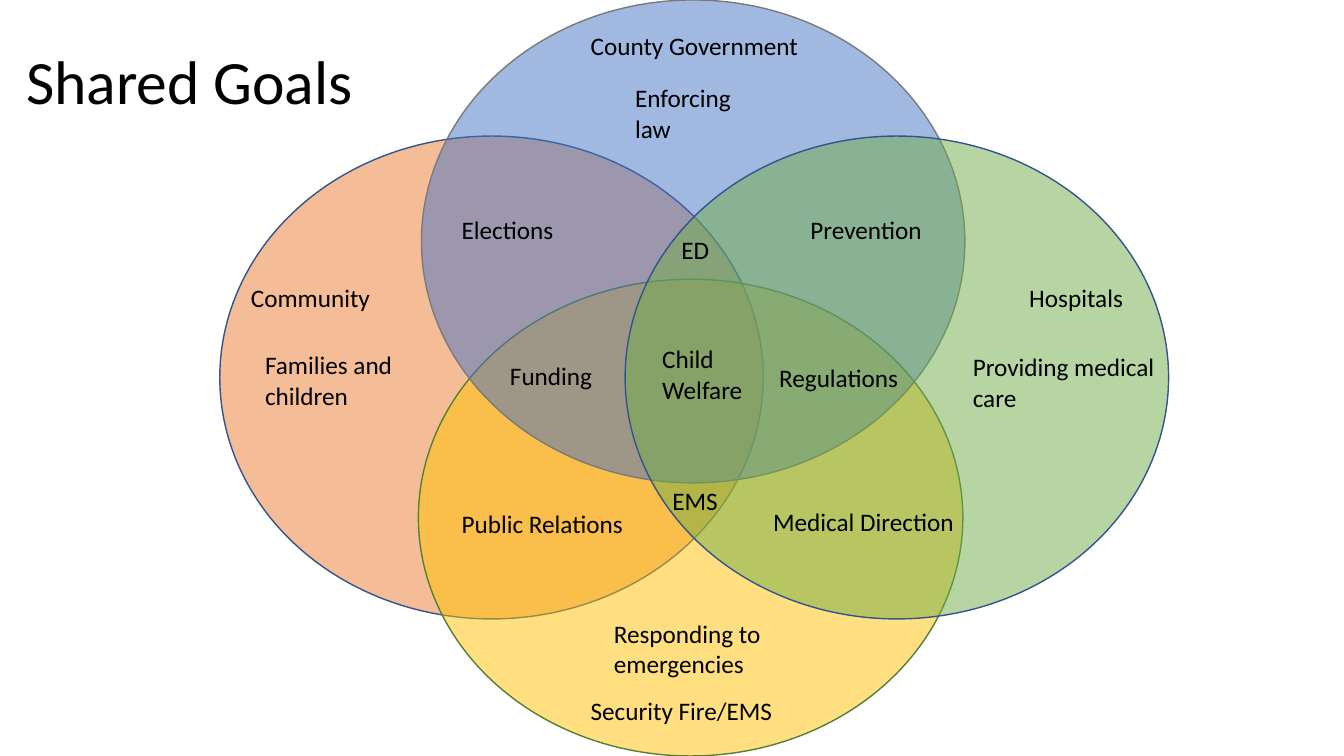
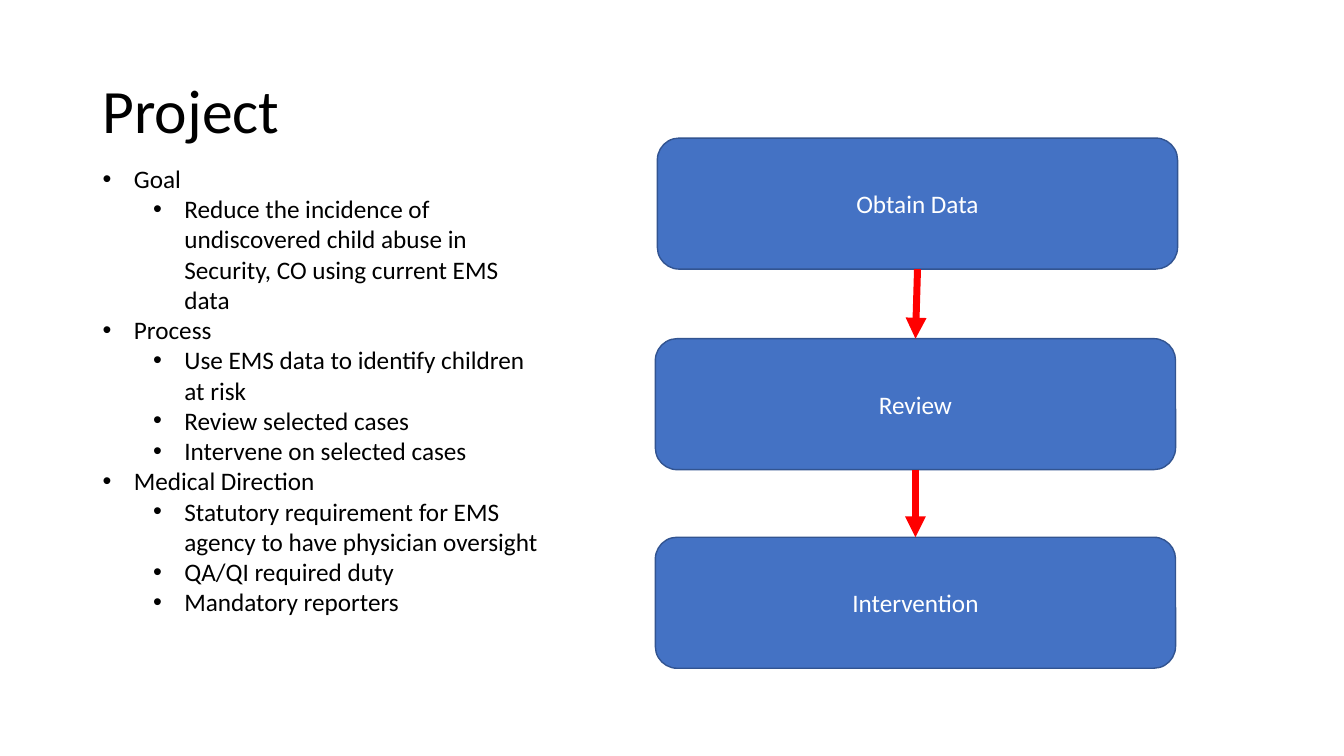
from lxml.etree import SubElement
from pptx import Presentation
from pptx.dml.color import RGBColor
from pptx.enum.shapes import MSO_CONNECTOR, MSO_SHAPE
from pptx.enum.text import MSO_ANCHOR, MSO_AUTO_SIZE, PP_ALIGN
from pptx.oxml.ns import qn
from pptx.util import Emu, Pt

EMU_PER_PX = 9144
BLACK = RGBColor(0x00, 0x00, 0x00)
WHITE = RGBColor(0xFF, 0xFF, 0xFF)
RED = RGBColor(0xFF, 0x00, 0x00)
BLUE = RGBColor(0x44, 0x72, 0xC4)
ORANGE = RGBColor(0xED, 0x7D, 0x31)
GOLD = RGBColor(0xFF, 0xC0, 0x00)
GREEN = RGBColor(0x70, 0xAD, 0x47)
NAVY = RGBColor(0x32, 0x54, 0x91)
DARK_GREEN = RGBColor(0x53, 0x80, 0x35)
GRAY = RGBColor(0x7A, 0x7A, 0x7A)

BODY_FONT = {"name": "Calibri", "size": Pt(18)}
TITLE_FONT = {"name": "Calibri", "size": Pt(44)}
TITLE_FRAME = {"word_wrap": True, "vertical_anchor": MSO_ANCHOR.MIDDLE}
LABEL_FRAME = {"word_wrap": True, "auto_size": MSO_AUTO_SIZE.SHAPE_TO_FIT_TEXT}
TITLE_PARAGRAPH = {"line_spacing": 0.9}
BODY_PARAGRAPH = {}
BOX_PARAGRAPH = {"alignment": PP_ALIGN.CENTER}

ONE_LINE = 40
TWO_LINES = 71
CIRCLES = [
    (218, 135, 539, 479, ORANGE, NAVY),
    (415, 277, 540, 473, GOLD, DARK_GREEN),
    (418, 0, 539, 479, BLUE, GRAY),
    (620, 135, 539, 479, GREEN, NAVY),
]
LABELS = [
    (576, 25, 236, ONE_LINE, "County Government"),
    (1011, 275, 236, ONE_LINE, "Hospitals"),
    (576, 685, 236, ONE_LINE, "Security Fire/EMS"),
    (239, 275, 236, ONE_LINE, "Community"),
    (647, 336, 166, TWO_LINES, "Child\nWelfare"),
    (757, 497, 203, ONE_LINE, "Medical Direction"),
    (666, 228, 55, ONE_LINE, "ED"),
    (794, 208, 136, ONE_LINE, "Prevention"),
    (763, 355, 166, ONE_LINE, "Regulations"),
    (657, 477, 137, ONE_LINE, "EMS"),
    (496, 353, 137, ONE_LINE, "Funding"),
    (448, 208, 151, ONE_LINE, "Elections"),
    (448, 499, 185, ONE_LINE, "Public Relations"),
    (620, 77, 137, TWO_LINES, "Enforcing law"),
    (253, 342, 169, TWO_LINES, "Families and children"),
    (955, 344, 218, TWO_LINES, "Providing medical care"),
    (599, 608, 275, TWO_LINES, "Responding to emergencies"),
]
STEPS = [(652, 137, "Obtain Data"), (650, 336, "Review"), (650, 533, "Intervention")]
OUTLINE = [
    (0, "Goal"),
    (1, "Reduce the incidence of undiscovered child abuse in Security, CO using current EMS data"),
    (0, "Process"),
    (1, "Use EMS data to identify children at risk"),
    (1, "Review selected cases"),
    (1, "Intervene on selected cases"),
    (0, "Medical Direction"),
    (1, "Statutory requirement for EMS agency to have physician oversight"),
    (1, "QA/QI required duty"),
    (1, "Mandatory reporters"),
]


def px(length):
    """Turn whole pixels into EMU."""
    return Emu(length * EMU_PER_PX)


def set_format(target, values):
    """Set every format value on the target."""
    for name, value in values.items():
        setattr(target, name, value)


class Deck:
    """Hold the shared style and the current slide."""

    def __init__(self):
        """Open an empty widescreen presentation."""
        self.presentation = Presentation()
        set_format(self.presentation, {"slide_width": px(1333), "slide_height": px(750)})
        self.slide = None

    def add_slide(self, title, left, top):
        """Start a blank slide with its title."""
        self.slide = self.presentation.slides.add_slide(self.presentation.slide_layouts[6])
        self.text(left, top, 1150, 145, title, TITLE_FRAME, TITLE_FONT, TITLE_PARAGRAPH)

    def fill_text(self, frame, text, font, color, paragraph_values):
        """Give the frame one paragraph for each line of text."""
        for index, line in enumerate(text.split("\n")):
            paragraph = frame.add_paragraph() if index else frame.paragraphs[0]
            set_format(paragraph, paragraph_values)
            run = paragraph.add_run()
            run.text = line
            set_format(run.font, font)
            run.font.color.rgb = color

    def text(self, left, top, width, height, text,
             frame_values=LABEL_FRAME, font=BODY_FONT, paragraph_values=BODY_PARAGRAPH):
        """Add a text box and return its frame."""
        frame = self.slide.shapes.add_textbox(px(left), px(top), px(width), px(height)).text_frame
        set_format(frame, frame_values)
        self.fill_text(frame, text, font, BLACK, paragraph_values)
        return frame

    def shape(self, kind, left, top, width, height, fill, line):
        """Add a flat outlined shape."""
        shape = self.slide.shapes.add_shape(kind, px(left), px(top), px(width), px(height))
        shape.shadow.inherit = False
        shape.fill.solid()
        shape.fill.fore_color.rgb = fill
        shape.line.color.rgb = line
        shape.line.width = Pt(1)
        return shape

    def circle(self, left, top, width, height, fill, line):
        """Add a half-transparent ellipse."""
        shape = self.shape(MSO_SHAPE.OVAL, left, top, width, height, fill, line)
        color = shape.element.spPr.find(qn("a:solidFill"))[0]
        SubElement(color, qn("a:alpha"), val="50000")

    def step(self, left, top, text):
        """Add a process box."""
        shape = self.shape(MSO_SHAPE.FLOWCHART_ALTERNATE_PROCESS, left, top, 516, 130, BLUE, NAVY)
        set_format(shape.text_frame, TITLE_FRAME)
        self.fill_text(shape.text_frame, text, BODY_FONT, WHITE, BOX_PARAGRAPH)
        return shape

    def arrow(self, upper, lower):
        """Join two boxes with a downward arrow."""
        connector = self.slide.shapes.add_connector(MSO_CONNECTOR.STRAIGHT, 0, 0, 0, 0)
        connector.begin_connect(upper, 2)
        connector.end_connect(lower, 0)
        connector.line.color.rgb = RED
        connector.line.width = Pt(5)
        properties = connector.element.spPr
        SubElement(properties.find(qn("a:ln")), qn("a:tailEnd"), type="triangle")
        SubElement(properties, qn("a:effectLst"))

    def bullets(self, left, top, width, height, items):
        """Add a two-level bulleted list."""
        frame = self.text(left, top, width, height, "\n".join(text for _, text in items))
        for paragraph, (level, _) in zip(frame.paragraphs, items):
            paragraph.level = level
            properties = paragraph._p.get_or_add_pPr()
            properties.set("marL", str(px(31 + 50 * level)))
            properties.set("indent", str(px(-31)))
            SubElement(properties, qn("a:buFont"), typeface="Arial")
            SubElement(properties, qn("a:buChar"), char="•")


def main():
    """Build and save both slides."""
    deck = Deck()
    deck.add_slide("Shared Goals", 16, 11)
    for circle in CIRCLES:
        deck.circle(*circle)
    for label in LABELS:
        deck.text(*label)

    deck.add_slide("Project", 92, 40)
    boxes = [deck.step(*step) for step in STEPS]
    for upper, lower in zip(boxes, boxes[1:]):
        deck.arrow(upper, lower)
    deck.bullets(92, 157, 458, 464, OUTLINE)
    deck.presentation.save("out.pptx")


if __name__ == "__main__":
    main()
